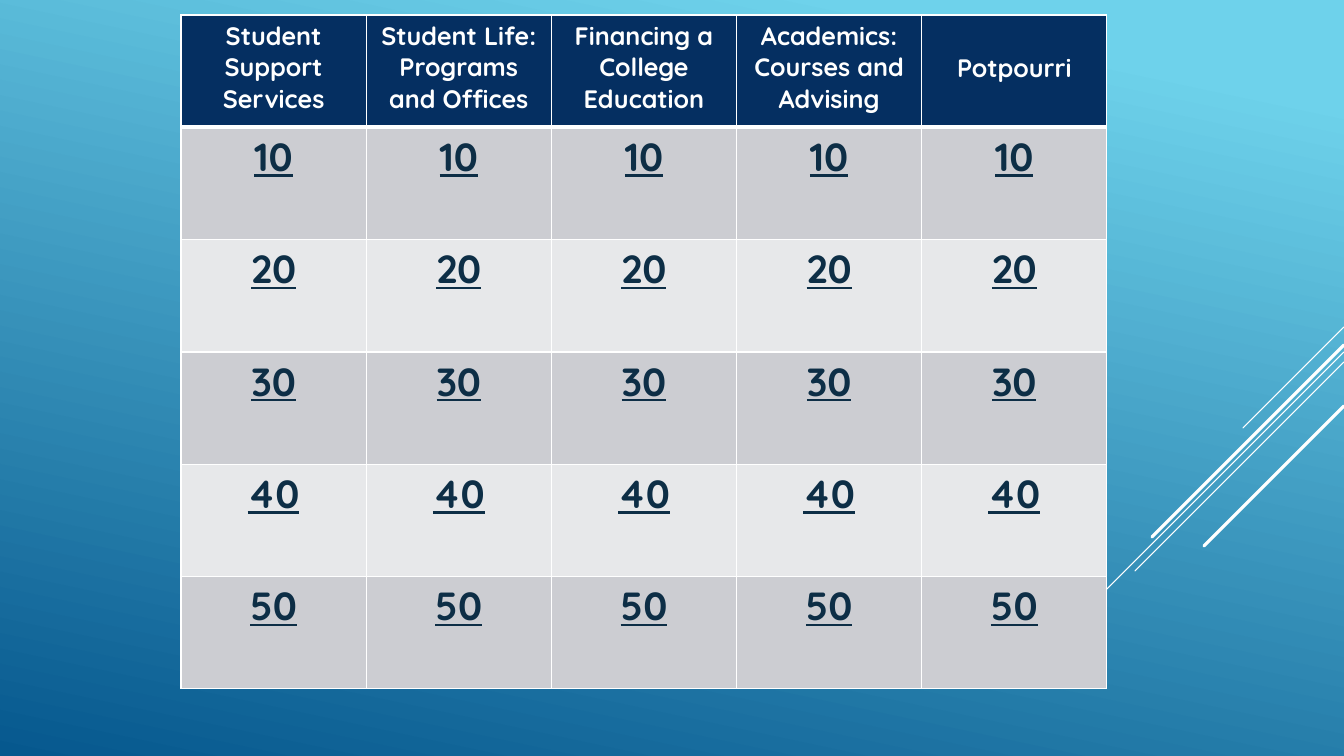
from pptx import Presentation
from pptx.dml.color import RGBColor
from pptx.enum.shapes import MSO_CONNECTOR as CONN
from pptx.enum.text import PP_ALIGN as ALIGN
from pptx.oxml.ns import qn
from pptx.util import Pt
from lxml.etree import SubElement

SKY = RGBColor(0x6E, 0xD2, 0xEB)
OCEAN = RGBColor(0x06, 0x58, 0x8E)
NAVY = RGBColor(0x05, 0x2F, 0x61)
INK = RGBColor(0x0D, 0x2E, 0x46)
GREY = RGBColor(0xCC, 0xCD, 0xD2)
PALE = RGBColor(0xE7, 0xE8, 0xEA)
WHITE = RGBColor(0xFF, 0xFF, 0xFF)

WIDTH, HEIGHT = 1344, 756
CATEGORIES = [
    "Student Support Services",
    "Student Life: Programs and Offices",
    "Financing a College Education",
    "Academics: Courses and Advising",
    "Potpourri",
]
POINTS = ["10", "20", "30", "40", "50"]
RAYS = [(327, 101, 0.75), (352, 329, 0.75), (362, 209, 0.75),
        (345, 192, 2.25), (406, 140, 2.25)]


def emu(px):
    return round(px * 12192000 / WIDTH)


class Board:
    font = "Quicksand"
    header = {"size": Pt(18), "bold": True, "underline": False}
    value = {"size": Pt(28), "bold": True, "underline": True}

    def __init__(self, prs):
        self.s = prs.slides.add_slide(prs.slide_layouts[6])

    def background(self, colors, positions, angle):
        fill = self.s.background.fill
        fill.gradient()
        fill.gradient_angle = 360 - angle
        for stop, color, position in zip(fill.gradient_stops, colors, positions):
            stop.color.rgb = color
            stop.position = position

    def ray(self, top, run, width):
        c = self.s.shapes.add_connector(
            CONN.STRAIGHT, emu(WIDTH), emu(top), emu(WIDTH - run), emu(top + run))
        c.line.color.rgb = WHITE
        c.line.width = Pt(width)
        spPr = c._element.spPr
        spPr.find(qn("a:ln")).set("cap", "rnd")
        SubElement(spPr, qn("a:effectLst"))

    def border(self, cell, **widths):
        tcPr = cell._tc.get_or_add_tcPr()
        for side, width in widths.items():
            ln = SubElement(tcPr, qn(f"a:ln{side}"), w=str(Pt(width)))
            fill = SubElement(ln, qn("a:solidFill"))
            SubElement(fill, qn("a:srgbClr"), val=str(WHITE))

    def cell(self, cell, text, style, color, fill):
        cell.fill.solid()
        cell.fill.fore_color.rgb = fill
        p = cell.text_frame.paragraphs[0]
        p.alignment = ALIGN.CENTER
        r = p.add_run()
        r.text = text
        r.font.name = self.font
        r.font.color.rgb = color
        for name, setting in style.items():
            setattr(r.font, name, setting)

    def table(self, left, top, width, height):
        rows, cols = len(POINTS) + 1, len(CATEGORIES)
        table = self.s.shapes.add_table(
            rows, cols, emu(left), emu(top), emu(width), emu(height)).table
        for row in table.rows:
            row.height = emu(height / rows)
        for column in table.columns:
            column.width = emu(width / cols)
        for i in range(rows):
            for j, category in enumerate(CATEGORIES):
                cell = table.cell(i, j)
                self.border(cell, L=1, R=1, T=3 if i == 1 else 1, B=3 if i == 0 else 1)
                if i == 0:
                    self.cell(cell, category, self.header, WHITE, NAVY)
                else:
                    self.cell(cell, POINTS[i - 1], self.value, INK, GREY if i % 2 else PALE)
        table.cell(0, cols - 1).margin_top = emu(37)


def main():
    prs = Presentation()
    prs.slide_width, prs.slide_height = emu(WIDTH), emu(HEIGHT)
    board = Board(prs)
    board.background([SKY, OCEAN], [0.1, 1.0], 102)
    for ray in RAYS:
        board.ray(*ray)
    board.table(181, 15, 926, 674)
    prs.save("out.pptx")


if __name__ == "__main__":
    main()
